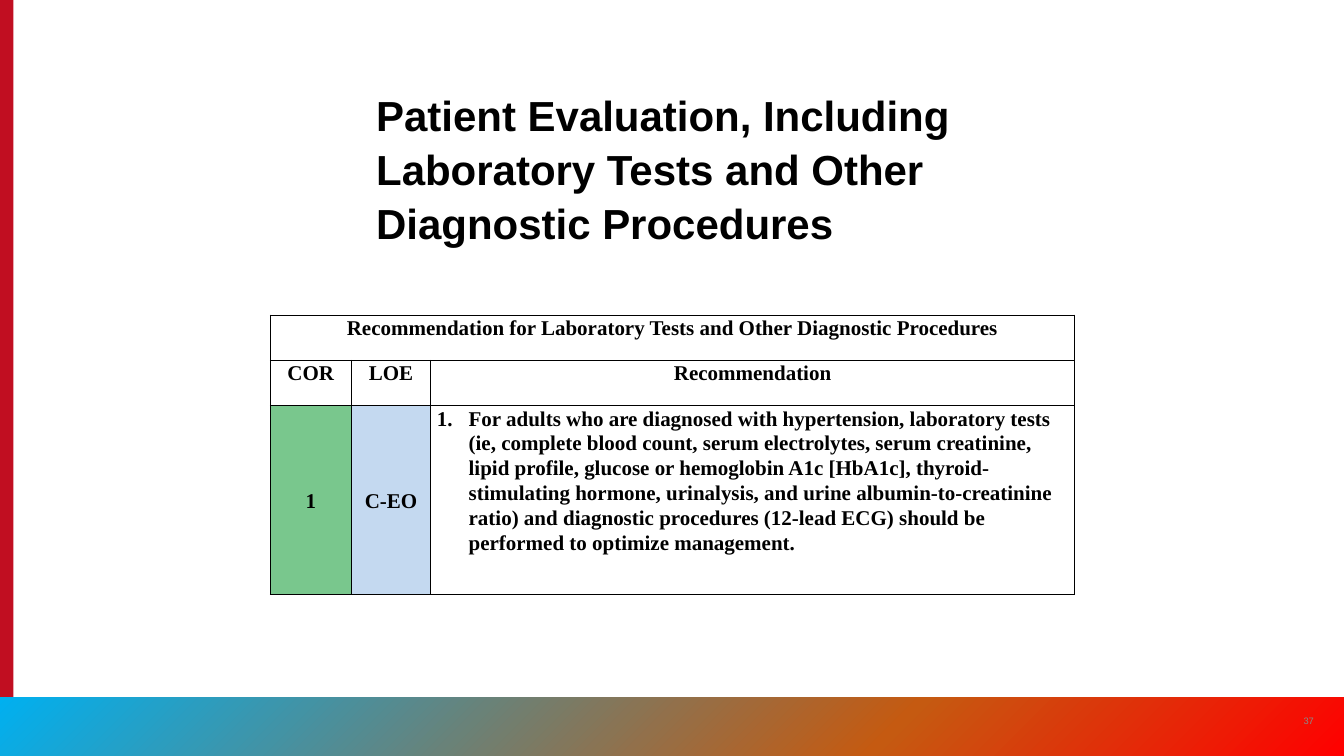
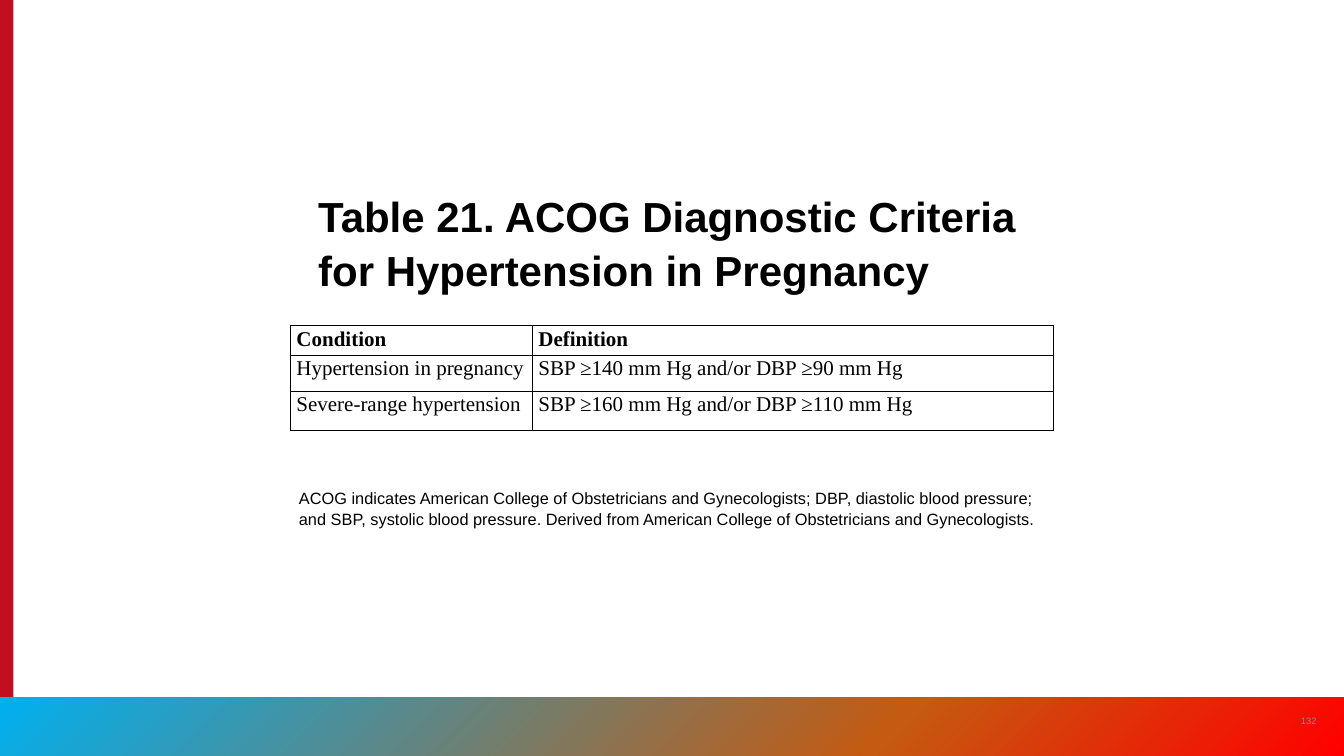
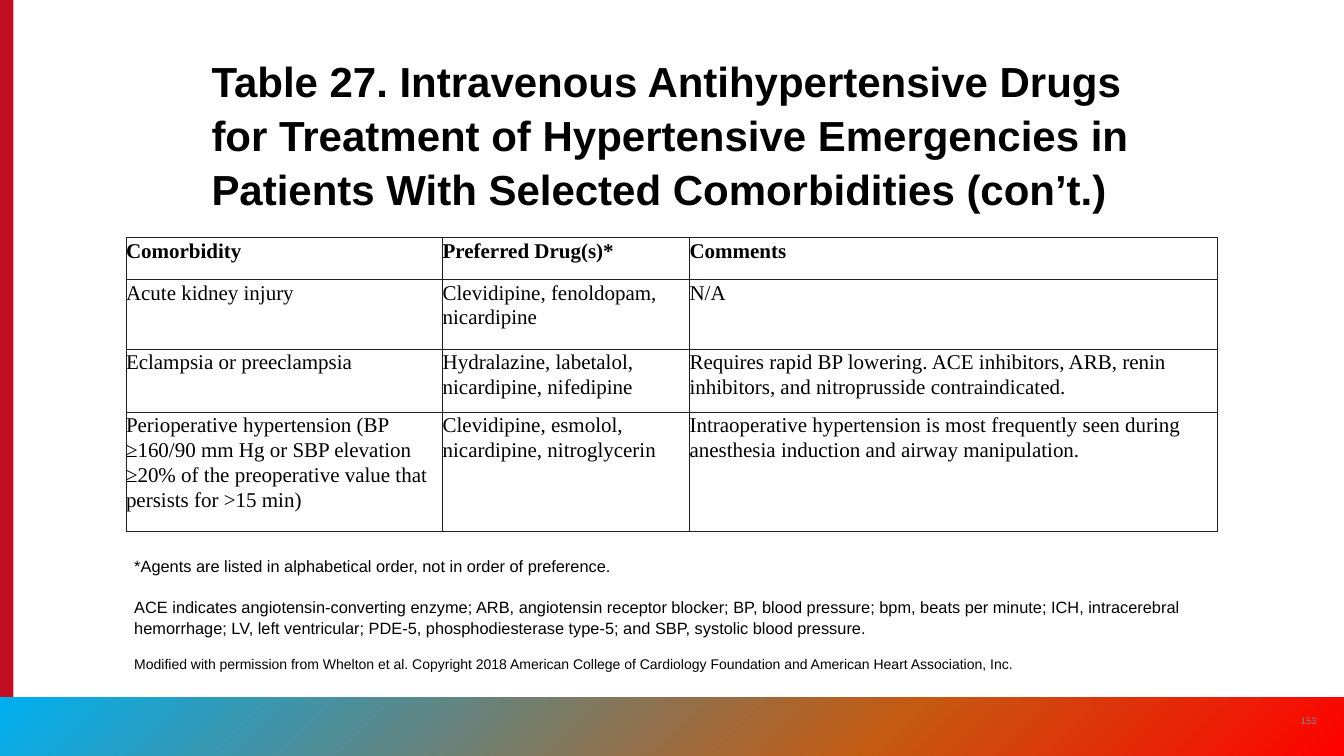
from dataclasses import dataclass

from lxml.etree import SubElement
from pptx import Presentation
from pptx.dml.color import RGBColor
from pptx.enum.shapes import MSO_SHAPE
from pptx.enum.text import MSO_ANCHOR, PP_ALIGN
from pptx.oxml import parse_xml
from pptx.oxml.ns import nsdecls, qn
from pptx.util import Emu, Inches, Pt

COLORS = {
    "bar": "C10E21", "number": "8A8B8A", "text": "000000", "rule": "000000",
    "soft_rule": "231F20", "paper": "FFFFFF", "green": "79C78D", "blue": "C4D9F0",
}
BAND_STOPS = ((0, "00B0F0"), (66, "C55A11"), (100, "FF0000"))
SANS, SERIF = "Arial", "Times New Roman"
COLS, ROWS = 16, 9
LINE_SPACING = 1.07

prs = Presentation()
prs.slide_width, prs.slide_height = Inches(16), Inches(9)


@dataclass(frozen=True)
class Box:
    """A place on the slide grid, in columns and rows."""
    x: float
    y: float
    w: float
    h: float

    def emu(self) -> tuple[Emu, Emu, Emu, Emu]:
        return col(self.x), row(self.y), col(self.w), row(self.h)


@dataclass(frozen=True)
class Style:
    size: float
    font: str = SANS
    bold: bool = False
    color: str = "text"
    align: PP_ALIGN = PP_ALIGN.LEFT
    before: float = 0
    after: float = 0
    spacing: float = LINE_SPACING


@dataclass(frozen=True)
class Cell:
    text: str
    bold: bool = False
    align: PP_ALIGN = PP_ALIGN.LEFT
    fill: str = "paper"
    anchor: MSO_ANCHOR = MSO_ANCHOR.TOP
    numbered: bool = False
    span: int = 1


@dataclass(frozen=True)
class Grid:
    x: float
    y: float
    widths: tuple[float, ...]
    heights: tuple[float, ...]
    cells: list[list[Cell]]
    inset: float = 0.07
    rule: str = "rule"


@dataclass(frozen=True)
class Caption:
    text: str
    size: float = 14
    before: float = 0


@dataclass(frozen=True)
class Page:
    number: int
    title: str
    title_box: Box
    grid: Grid
    captions: tuple[Caption, ...] = ()
    caption_box: Box | None = None


def col(n: float) -> Emu:
    return Emu(round(prs.slide_width * n / COLS))


def row(n: float) -> Emu:
    return Emu(round(prs.slide_height * n / ROWS))


def rgb(name: str) -> RGBColor:
    return RGBColor.from_string(COLORS[name])


def write(p, text: str, style: Style) -> None:
    p.add_run().text = text
    p.alignment = style.align
    p.line_spacing = style.spacing
    if style.before:
        p.space_before = Pt(style.before)
    p.space_after = Pt(style.after)
    p.font.size, p.font.name, p.font.bold = Pt(style.size), style.font, style.bold
    p.font.color.rgb = rgb(style.color)


def add_text(s, box: Box, lines: list[tuple[str, Style]],
             anchor: MSO_ANCHOR = MSO_ANCHOR.TOP) -> None:
    tf = s.shapes.add_textbox(*box.emu()).text_frame
    tf.word_wrap, tf.vertical_anchor = True, anchor
    for i, (text, style) in enumerate(lines):
        write(tf.add_paragraph() if i else tf.paragraphs[0], text, style)


def add_block(s, box: Box):
    sp = s.shapes.add_shape(MSO_SHAPE.RECTANGLE, *box.emu())
    sp.shadow.inherit = False
    sp.line.fill.background()
    return sp


def add_frame(s, number: int) -> None:
    # Red bar on the left, then the colour band along the bottom
    bar = add_block(s, Box(0, 0, 0.16, ROWS))
    bar.fill.solid()
    bar.fill.fore_color.rgb = rgb("bar")
    band = add_block(s, Box(0, 8.3, COLS, 0.7))
    stops = "".join(f'<a:gs pos="{pos * 1000}"><a:srgbClr val="{color}"/></a:gs>'
                    for pos, color in BAND_STOPS)
    band.fill.background()
    no_fill = band.element.spPr.find(qn("a:noFill"))
    no_fill.getparent().replace(no_fill, parse_xml(
        f'<a:gradFill {nsdecls("a")} rotWithShape="1"><a:gsLst>{stops}</a:gsLst>'
        '<a:lin ang="2700000" scaled="0"/></a:gradFill>'))
    # Slide number
    style = Style(8, color="number", align=PP_ALIGN.CENTER, spacing=1.0)
    add_text(s, Box(15.34, 8.34, 0.48, 0.48), [(str(number), style)], MSO_ANCHOR.MIDDLE)


def set_borders(c, color: str) -> None:
    tc_pr = c._tc.get_or_add_tcPr()
    for i, side in enumerate(("lnL", "lnR", "lnT", "lnB")):
        tc_pr.insert(i, parse_xml(
            f'<a:{side} {nsdecls("a")} w="12700"><a:solidFill>'
            f'<a:srgbClr val="{COLORS[color]}"/></a:solidFill></a:{side}>'))


def fill_cell(c, cell: Cell, inset: float) -> None:
    c.margin_left = c.margin_right = Inches(inset)
    c.margin_top = c.margin_bottom = 0
    c.vertical_anchor = cell.anchor
    p = c.text_frame.paragraphs[0]
    if cell.numbered:
        p_pr = p._p.get_or_add_pPr()
        p_pr.set("marL", str(Inches(0.38)))
        p_pr.set("indent", str(-Inches(0.38)))
        SubElement(p_pr, qn("a:buAutoNum"), type="arabicPeriod")
    write(p, cell.text, Style(18, SERIF, cell.bold, align=cell.align, after=8))


def add_grid(s, grid: Grid) -> None:
    box = Box(grid.x, grid.y, sum(grid.widths), sum(grid.heights))
    table = s.shapes.add_table(len(grid.heights), len(grid.widths), *box.emu()).table
    table.first_row = table.horz_banding = False
    for column, width in zip(table.columns, grid.widths):
        column.width = col(width)
    for line, height in zip(table.rows, grid.heights):
        line.height = row(height)
    for i, cells in enumerate(grid.cells):
        for j, cell in enumerate(cells):
            c = table.cell(i, j)
            if cell.span > 1:
                c.merge(table.cell(i, j + cell.span - 1))
            fill_cell(c, cell, grid.inset)
            for k in range(j, j + cell.span):
                part = table.cell(i, k)
                part.fill.solid()
                part.fill.fore_color.rgb = rgb(cell.fill)
                set_borders(part, grid.rule)


def add_page(page: Page) -> None:
    s = prs.slides.add_slide(prs.slide_layouts[6])
    add_frame(s, page.number)
    add_text(s, page.title_box, [(page.title, Style(36, bold=True))], MSO_ANCHOR.BOTTOM)
    add_grid(s, page.grid)
    if page.caption_box:
        add_text(s, page.caption_box,
                 [(c.text, Style(c.size, before=c.before)) for c in page.captions])


def head(text: str, span: int = 1) -> Cell:
    return Cell(text, True, PP_ALIGN.CENTER, span=span)


def grade(text: str, fill: str) -> Cell:
    return Cell(text, True, PP_ALIGN.CENTER, fill, MSO_ANCHOR.MIDDLE)


def plain_rows(header: tuple[str, ...], *body: tuple[str, ...]) -> list[list[Cell]]:
    return [[Cell(t, bold=True) for t in header]] + [[Cell(t) for t in r] for r in body]


PAGES = [
    Page(
        37,
        "Patient Evaluation, Including Laboratory Tests and Other Diagnostic Procedures",
        Box(4.38, 1.17, 7.23, 1.83),
        Grid(3.22, 3.75, (0.96, 0.95, 7.66), (0.54, 0.54, 2.25), [
            [head("Recommendation for Laboratory Tests and Other Diagnostic Procedures", 3)],
            [head("COR"), head("LOE"), head("Recommendation")],
            [grade("1", "green"), grade("C-EO", "blue"),
             Cell("For adults who are diagnosed with hypertension, laboratory tests "
                  "(ie, complete blood count, serum electrolytes, serum creatinine, lipid "
                  "profile, glucose or hemoglobin A1c [HbA1c], thyroid-stimulating hormone, "
                  "urinalysis, and urine albumin-to-creatinine ratio) and diagnostic "
                  "procedures (12-lead ECG) should be performed to optimize management.",
                  bold=True, numbered=True)],
        ]),
    ),
    Page(
        132,
        "Table 21. ACOG Diagnostic Criteria for Hypertension in Pregnancy",
        Box(3.69, 2.23, 8.62, 1.33),
        Grid(3.46, 3.88, (2.88, 6.2), (0.35, 0.43, 0.47), plain_rows(
            ("Condition", "Definition"),
            ("Hypertension in pregnancy", "SBP ≥140 mm Hg and/or DBP ≥90 mm Hg"),
            ("Severe-range hypertension", "SBP ≥160 mm Hg and/or DBP ≥110 mm Hg"),
        )),
        (Caption("ACOG indicates American College of Obstetricians and Gynecologists; DBP, "
                 "diastolic blood pressure; and SBP, systolic blood pressure. Derived from "
                 "American College of Obstetricians and Gynecologists."),),
        Box(3.46, 5.75, 9.08, 0.57),
    ),
    Page(
        153,
        "Table 27. Intravenous Antihypertensive Drugs for Treatment of Hypertensive "
        "Emergencies in Patients With Selected Comorbidities (con’t.)",
        Box(2.42, 0.67, 11.17, 1.92),
        Grid(1.5, 2.83, (3.77, 2.94, 6.29), (0.5, 0.83, 0.75, 1.42), plain_rows(
            ("Comorbidity", "Preferred Drug(s)*", "Comments"),
            ("Acute kidney injury", "Clevidipine, fenoldopam, nicardipine", "N/A"),
            ("Eclampsia or preeclampsia", "Hydralazine, labetalol, nicardipine, nifedipine",
             "Requires rapid BP lowering. ACE inhibitors, ARB, renin inhibitors, and "
             "nitroprusside contraindicated."),
            ("Perioperative hypertension (BP ≥160/90 mm Hg or SBP elevation ≥20% of the "
             "preoperative value that persists for >15 min)",
             "Clevidipine, esmolol, nicardipine, nitroglycerin",
             "Intraoperative hypertension is most frequently seen during anesthesia "
             "induction and airway manipulation."),
        ), inset=0, rule="soft_rule"),
        (Caption("*Agents are listed in alphabetical order, not in order of preference."),
         Caption("ACE indicates angiotensin-converting enzyme; ARB, angiotensin receptor "
                 "blocker; BP, blood pressure; bpm, beats per minute; ICH, intracerebral "
                 "hemorrhage; LV, left ventricular; PDE-5, phosphodiesterase type-5; and "
                 "SBP, systolic blood pressure.", before=16.7),
         Caption("Modified with permission from Whelton et al. Copyright 2018 American "
                 "College of Cardiology Foundation and American Heart Association, Inc.",
                 12, 14.3)),
        Box(1.5, 6.56, 13, 1.45),
    ),
]


def main() -> None:
    for page in PAGES:
        add_page(page)
    prs.save("out.pptx")


if __name__ == "__main__":
    main()
